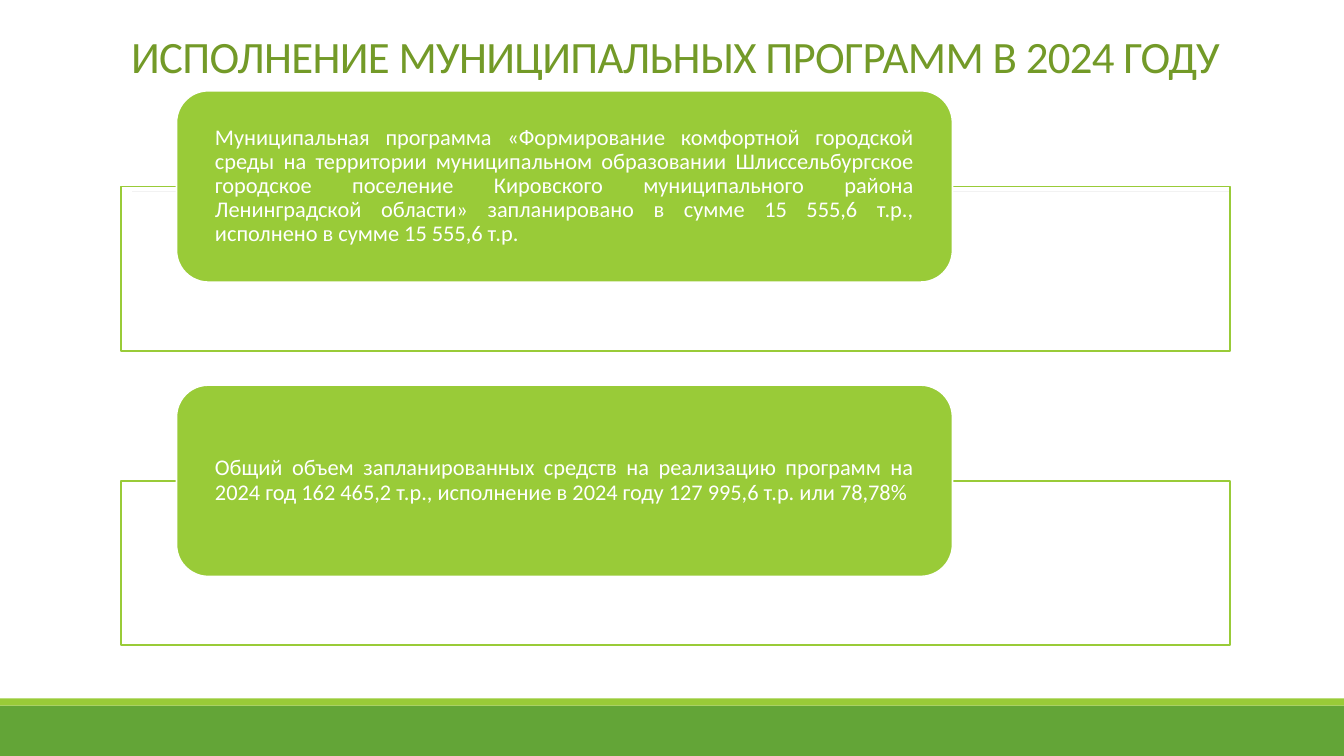
from dataclasses import dataclass
from typing import Optional

from lxml.etree import SubElement
from pptx import Presentation
from pptx.dml.color import RGBColor
from pptx.enum.shapes import MSO_CONNECTOR as Connector, MSO_SHAPE as Preset
from pptx.enum.text import MSO_ANCHOR as Anchor, PP_ALIGN as Align
from pptx.oxml.ns import qn
from pptx.util import Emu, Inches, Pt

COLUMNS, ROWS = 160, 90
FONT = "Calibri"
WHITE, LIME, GREEN, OLIVE, GREY = "FFFFFF", "99CB38", "63A537", "739A28", "808080"
FRAME_LEFT, FRAME_WIDTH = 14.4, 132
FIRST_CARD_TOP, CARD_PITCH = 10.8, 35.04
CARD_HEIGHT = 22.8


@dataclass(frozen=True)
class Area:
    left: float
    top: float
    width: float
    height: float


@dataclass(frozen=True)
class Block:
    area: Area
    fill: str
    line: Optional[str] = None
    preset: Preset = Preset.RECTANGLE
    opacity: int = 100


@dataclass(frozen=True)
class Style:
    size: float
    color: str
    align: Align
    anchor: Anchor
    leading: float
    inset: float = 0
    tracking: float = 0


TITLE_STYLE = Style(32, OLIVE, Align.CENTER, Anchor.BOTTOM, 0.85, tracking=-0.5)
CARD_STYLE = Style(16, WHITE, Align.JUSTIFY, Anchor.MIDDLE, 0.9, inset=0.29)

TITLE = "ИСПОЛНЕНИЕ МУНИЦИПАЛЬНЫХ ПРОГРАММ В 2024 ГОДУ"
CARD_TEXTS = (
    "Муниципальная программа «Формирование комфортной городской среды на "
    "территории муниципальном образовании Шлиссельбургское городское поселение "
    "Кировского муниципального района Ленинградской области» запланировано в "
    "сумме 15 555,6 т.р., исполнено в сумме 15 555,6 т.р.",
    "Общий объем запланированных средств на реализацию программ на 2024 год "
    "162 465,2 т.р., исполнение в 2024 году 127 995,6 т.р. или 78,78%",
)
FOOTER_BANDS = (
    Block(Area(0, 84, COLUMNS, 6), GREEN),
    Block(Area(0, 83.16, COLUMNS, 0.84), LIME),
)

deck = Presentation()
deck.slide_width, deck.slide_height = Inches(13.33), Inches(7.5)
page = deck.slides.add_slide(deck.slide_layouts[6])


def color(value: str) -> RGBColor:
    return RGBColor.from_string(value)


def across(columns: float) -> Emu:
    return Emu(round(deck.slide_width * columns / COLUMNS))


def down(rows: float) -> Emu:
    return Emu(round(deck.slide_height * rows / ROWS))


def place(area: Area) -> tuple:
    return across(area.left), down(area.top), across(area.width), down(area.height)


def draw_block(block: Block):
    box = page.shapes.add_shape(block.preset, *place(block.area))
    box.shadow.inherit = False
    box.fill.solid()
    box.fill.fore_color.rgb = color(block.fill)
    if block.opacity < 100:
        tint = box.fill._xPr.find(f".//{qn('a:srgbClr')}")
        SubElement(tint, qn("a:alpha"), val=str(block.opacity * 1000))
    if block.line:
        box.line.color.rgb = color(block.line)
        box.line.width = Pt(1.25)
    else:
        box.line.fill.background()
    return box


def write(box, text: str, style: Style) -> None:
    frame = box.text_frame
    frame.word_wrap = True
    frame.vertical_anchor = style.anchor
    frame.margin_left = frame.margin_right = Inches(style.inset)
    para = frame.paragraphs[0]
    para.alignment = style.align
    para.line_spacing = style.leading
    span = para.add_run()
    span.text = text
    span.font.name = FONT
    span.font.size = Pt(style.size)
    span.font.color.rgb = color(style.color)
    if style.tracking:
        span.font._element.set("spc", str(round(style.tracking * 100)))


def draw_rule(left: float, right: float, top: float) -> None:
    rule = page.shapes.add_connector(
        Connector.STRAIGHT, across(left), down(top), across(right), down(top)
    )
    rule.line.color.rgb = color(GREY)
    rule.line.width = Pt(0.5)
    SubElement(rule._element.spPr, qn("a:effectLst"))


def draw_card(index: int, text: str) -> None:
    top = FIRST_CARD_TOP + index * CARD_PITCH
    frame_area = Area(FRAME_LEFT, top + CARD_HEIGHT / 2, FRAME_WIDTH, 19.56)
    draw_block(Block(frame_area, WHITE, LIME, opacity=90))
    card_area = Area(21, top, 92.4, CARD_HEIGHT)
    card = draw_block(Block(card_area, LIME, WHITE, Preset.ROUNDED_RECTANGLE))
    write(card, text, CARD_STYLE)


def main() -> None:
    for band in FOOTER_BANDS:
        draw_block(band)
    draw_rule(15.72, 146.52, 22.8)
    title_area = Area(FRAME_LEFT, 3.72, FRAME_WIDTH, 6.72)
    write(page.shapes.add_textbox(*place(title_area)), TITLE, TITLE_STYLE)
    for index, text in enumerate(CARD_TEXTS):
        draw_card(index, text)
    deck.save("out.pptx")


if __name__ == "__main__":
    main()
